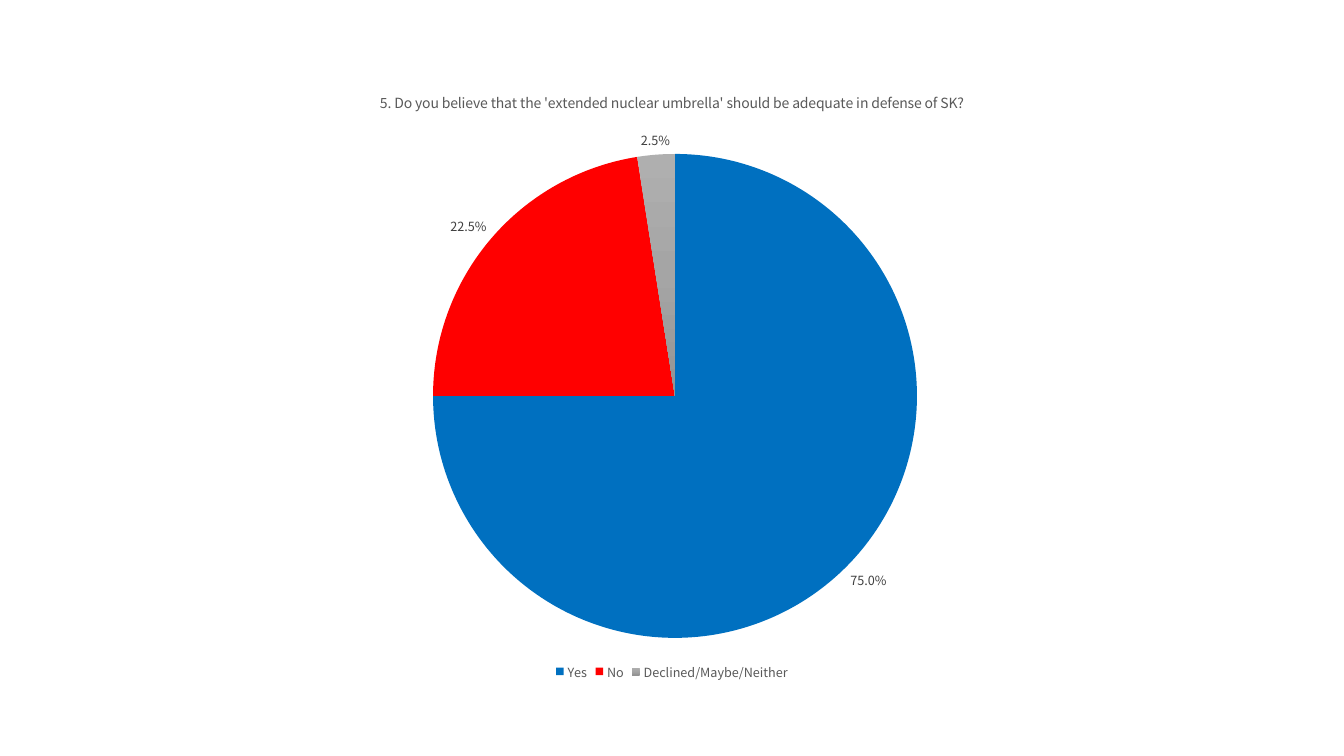
"""Draw a survey question as a pie chart slide."""
from copy import deepcopy
from dataclasses import dataclass

from lxml.etree import SubElement
from pptx import Presentation
from pptx.chart.chart import Chart
from pptx.chart.data import CategoryChartData
from pptx.dml.color import RGBColor
from pptx.dml.fill import FillFormat
from pptx.enum.chart import XL_CHART_TYPE, XL_LABEL_POSITION, XL_LEGEND_POSITION
from pptx.oxml.ns import qn
from pptx.text.text import Font
from pptx.util import Pt

FACE = "Noto Sans CJK KR"
ASK = "5. Do you believe that the 'extended nuclear umbrella' should be adequate in defense of SK?"
BLACK = RGBColor(0x00, 0x00, 0x00)
DARK = RGBColor(0x40, 0x40, 0x40)
GRAY = RGBColor(0x59, 0x59, 0x59)
BLUE = RGBColor(0x00, 0x70, 0xC0)
RED = RGBColor(0xFF, 0x00, 0x00)
LIGHT = RGBColor(0xAF, 0xAF, 0xAF)
MID = RGBColor(0xA5, 0xA5, 0xA5)
DEEP = RGBColor(0x93, 0x93, 0x93)


@dataclass(frozen=True)
class Answer:
    name: str
    share: float
    tones: tuple[RGBColor, ...]


ANSWERS = (
    Answer("Yes", 0.75, (BLUE,)),
    Answer("No", 0.225, (RED,)),
    Answer("Declined/Maybe/Neither", 0.025, (LIGHT, MID, DEEP)),
)


def style(font: Font, size: float, color: RGBColor) -> None:
    font.name, font.size, font.bold = FACE, Pt(size), False
    font.color.rgb = color


def paint(chart: Chart, fill: FillFormat, tones: tuple[RGBColor, ...]) -> None:
    if len(tones) == 1:
        fill.solid()
        fill.fore_color.rgb = tones[0]
        return
    fill.gradient()
    fill.gradient_angle = 270
    first = next(chart.element.iter(qn("a:gs")))
    first.addnext(deepcopy(first))
    for i, (stop, tone) in enumerate(zip(fill.gradient_stops, tones)):
        stop.position = i / (len(tones) - 1)
        stop.color.rgb = tone


def place(chart: Chart, **box: float) -> None:
    area = next(chart.element.iter(qn("c:plotArea")))
    for old in area.findall(qn("c:layout")):
        area.remove(old)
    frame = SubElement(area, qn("c:layout"))
    area.insert(0, frame)
    grid = SubElement(frame, qn("c:manualLayout"))
    marks = {"layoutTarget": "inner", "xMode": "edge", "yMode": "edge", **box}
    for tag, value in marks.items():
        SubElement(grid, qn(f"c:{tag}")).set("val", str(value))


def main() -> None:
    deck = Presentation()
    deck.slide_width, deck.slide_height = Pt(960), Pt(540)
    slide = deck.slides.add_slide(deck.slide_layouts[6])

    data = CategoryChartData(number_format="0.0%")
    data.categories = [a.name for a in ANSWERS]
    data.add_series(ASK, [a.share for a in ANSWERS])
    chart = slide.shapes.add_chart(
        XL_CHART_TYPE.PIE, Pt(50.4), Pt(50.4), Pt(859), Pt(438.5), data
    ).chart
    style(chart.font, 10, BLACK)

    chart.has_title = True
    title = chart.chart_title
    title.include_in_layout = False
    run = title.text_frame.paragraphs[0].add_run()
    run.text = ASK
    style(run.font, 10, GRAY)

    chart.has_legend = True
    chart.legend.position = XL_LEGEND_POSITION.BOTTOM
    chart.legend.include_in_layout = False
    style(chart.legend.font, 9, GRAY)

    plot = chart.plots[0]
    plot.vary_by_categories = True
    pie = plot.series[0]
    for i, answer in enumerate(ANSWERS):
        part = pie.points[i].format
        paint(chart, part.fill, answer.tones)
        part.line.fill.background()

    labels = pie.data_labels
    labels.show_value = True
    labels.number_format = "0.0%"
    labels.number_format_is_linked = False
    labels.position = XL_LABEL_POSITION.OUTSIDE_END
    style(labels.font, 9, DARK)
    place(chart, x=0.3014, y=0.1359, w=0.4025, h=0.7884)
    deck.save("out.pptx")


if __name__ == "__main__":
    main()
